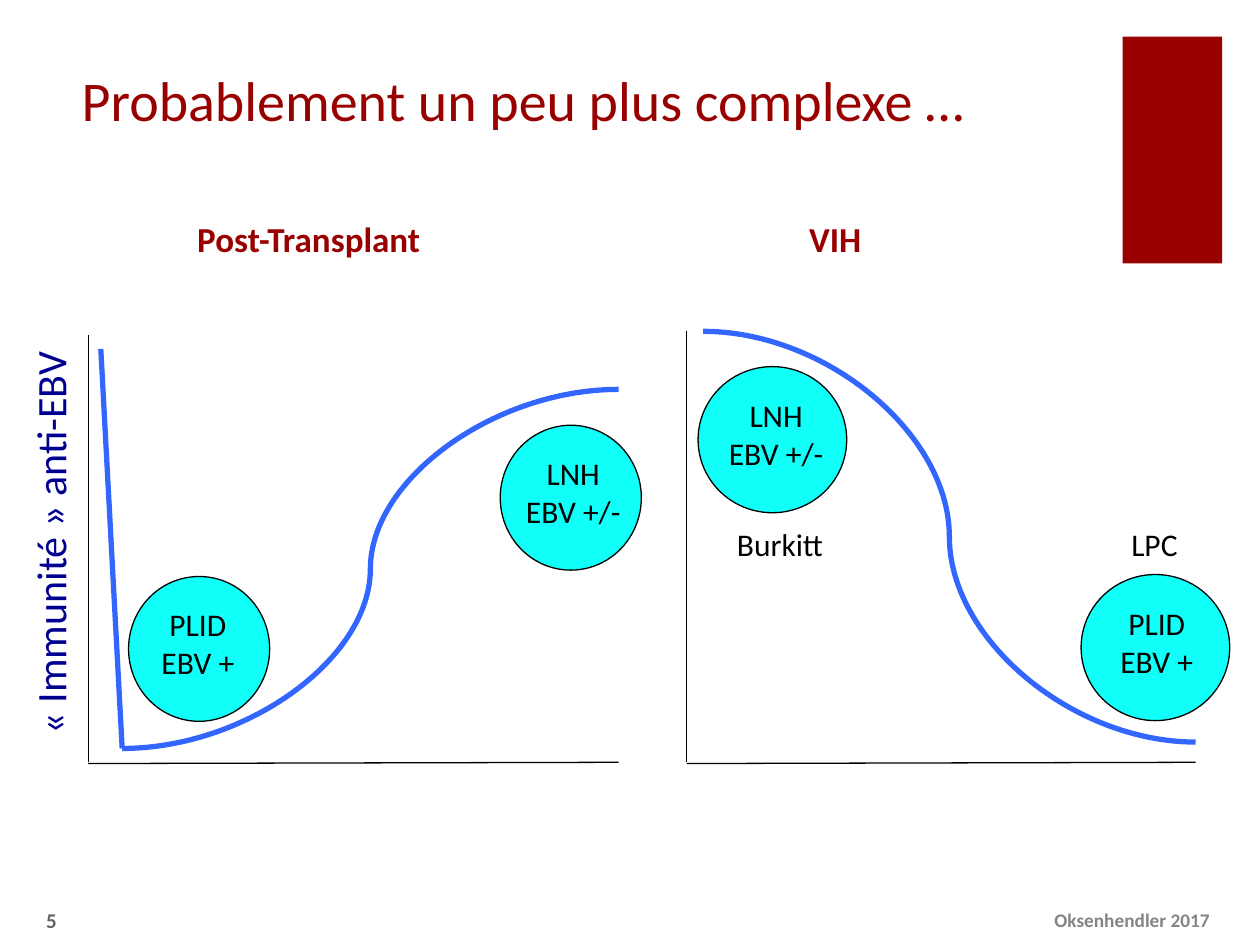
from dataclasses import dataclass

from pptx import Presentation
from pptx import util as u
from pptx.dml.color import RGBColor
from pptx.enum import shapes, text
from pptx.oxml import ns
from lxml import etree


@dataclass(frozen=True)
class Theme:
    font: str = "Calibri"
    accent: str = "990000"
    curve: str = "3366FF"
    bubble: str = "10FFF9"
    ink: str = "000000"
    axis_title: str = "000090"
    credit: str = "858585"
    number: str = "666666"
    title_size: int = 32
    axis_size: int = 24
    heading_size: int = 20
    label_size: int = 18
    number_size: int = 12
    credit_size: int = 11
    thin: float = 0.75
    thick: float = 3


THEME = Theme()
COLUMNS, ROWS = 100, 75
CELL = u.Inches(0.1)
MIDDLE = text.MSO_ANCHOR.MIDDLE
BOTTOM = text.MSO_ANCHOR.BOTTOM
CENTER = text.PP_ALIGN.CENTER
RIGHT = text.PP_ALIGN.RIGHT
STRAIGHT = shapes.MSO_CONNECTOR.STRAIGHT
CURVE = shapes.MSO_CONNECTOR.CURVE


@dataclass(frozen=True)
class Box:
    left: float
    top: float
    width: float
    height: float

    def inner(self, left, top, width, height):
        return Box(self.left + left, self.top + top, width, height)

    def around(self, x, y, width, height):
        return self.inner(x - width / 2, y - height / 2, width, height)

    def emu(self):
        return [round(n * CELL) for n in (self.left, self.top, self.width, self.height)]


def color(code):
    return RGBColor.from_string(code)


def apply(target, formats):
    for name, value in formats.items():
        setattr(target, name, value)


def write(slide, box, lines, size, ink, bold=False, align=None, anchor=None, fit=False):
    label = slide.shapes.add_textbox(*box.emu())
    frame = label.text_frame
    growth = text.MSO_AUTO_SIZE.SHAPE_TO_FIT_TEXT if fit else text.MSO_AUTO_SIZE.NONE
    apply(frame, {"text": lines, "word_wrap": not fit, "auto_size": growth,
                  "vertical_anchor": anchor})
    for paragraph in frame.paragraphs:
        paragraph.alignment = align
        font = paragraph.runs[0].font
        apply(font, {"name": THEME.font, "size": u.Pt(size), "bold": bold})
        font.color.rgb = color(ink)
    return label


def draw_line(slide, box, start, end, ink, weight, kind=STRAIGHT):
    ends = [round(n * CELL) for x, y in (start, end) for n in (box.left + x, box.top + y)]
    line = slide.shapes.add_connector(kind, *ends)
    line.line.color.rgb = color(ink)
    line.line.width = u.Pt(weight)
    etree.SubElement(line._element.spPr, ns.qn("a:effectLst"))


def fill_shape(slide, box, kind, fill, outline=None):
    shape = slide.shapes.add_shape(kind, *box.emu())
    shape.shadow.inherit = False
    shape.fill.solid()
    shape.fill.fore_color.rgb = color(fill)
    if outline:
        shape.line.color.rgb = color(outline)
        shape.line.width = u.Pt(THEME.thin)
    else:
        shape.line.fill.background()


def draw_header(slide, box):
    fill_shape(slide, box.inner(89.1, 2.9, 7.9, 18), shapes.MSO_SHAPE.RECTANGLE, THEME.accent)
    write(slide, box.inner(5.5, 2.8, 80.8, 8.2), "Probablement un peu plus complexe …",
          THEME.title_size, THEME.accent, anchor=BOTTOM)
    for left, heading in ((5, "Post-Transplant"), (46.8, "VIH")):
        write(slide, box.inner(left, 14.1, 39, 7), heading, THEME.heading_size,
              THEME.accent, bold=True, align=CENTER, anchor=BOTTOM)


def draw_footer(slide, box):
    write(slide, box.inner(82.7, 0, 17.3, box.height), "Oksenhendler 2017",
          THEME.credit_size, THEME.credit, bold=True, anchor=MIDDLE)
    write(slide, box.inner(0, 0, 5.5, box.height), "5", THEME.number_size,
          THEME.number, bold=True, align=RIGHT, anchor=MIDDLE)


def draw_axis_title(slide, box):
    title = write(slide, box, "« Immunité » anti-EBV", THEME.axis_size,
                  THEME.axis_title, fit=True)
    title.rotation = 270


def draw_bubble(slide, box, nudge, lines, label_width):
    fill_shape(slide, box, shapes.MSO_SHAPE.OVAL, THEME.bubble, THEME.ink)
    label = box.around(box.width / 2 + nudge, box.height / 2 - 0.4, label_width, 7.1)
    write(slide, label, lines, THEME.label_size, THEME.ink, align=CENTER, fit=True)


def draw_panel(slide, box, curve, diameter, plid, lnh, fall=None, notes=()):
    draw_line(slide, box, (0, 0), (0, box.height), THEME.ink, THEME.thin)
    draw_line(slide, box, (box.width, box.height), (0, box.height + 0.1),
              THEME.ink, THEME.thin)
    draw_line(slide, box, *curve, THEME.curve, THEME.thick, CURVE)
    if fall:
        draw_line(slide, box, *fall, THEME.curve, THEME.thick)
    for (x, y, nudge), lines, label_width in ((plid, "PLID\nEBV +", 7.9),
                                              (lnh, "LNH\nEBV +/-", 9.6)):
        draw_bubble(slide, box.around(x, y, *diameter), nudge, lines, label_width)
    for left, width, note in notes:
        write(slide, box.inner(left, 14.9, width, 4), note, THEME.label_size,
              THEME.ink, fit=True)


def main():
    deck = Presentation()
    deck.slide_width, deck.slide_height = COLUMNS * CELL, ROWS * CELL
    slide = deck.slides.add_slide(deck.slide_layouts[6])
    draw_header(slide, Box(0, 0, COLUMNS, 22))
    draw_footer(slide, Box(0, 71, COLUMNS, 4))
    draw_axis_title(slide, Box(-12.5, 40.3, 32.9, 5))
    draw_panel(slide, Box(7, 26.6, 42.1, 33.9),
               curve=((42.1, 4.3), (2.7, 32.8)), diameter=(11.2, 11.5),
               plid=(8.8, 24.9, -0.1), lnh=(38.3, 12.9, 0.2),
               fall=((1, 1.1), (2.7, 32.8)))
    draw_panel(slide, Box(54.5, 26.3, 40.4, 34.2),
               curve=((1.3, 0), (40.4, 32.6)), diameter=(11.8, 11.6),
               plid=(37.2, 25.1, 0.1), lnh=(6.8, 8.6, 0.3),
               notes=((3, 8.9, "Burkitt"), (34.3, 5.8, "LPC")))
    deck.save("out.pptx")


if __name__ == "__main__":
    main()
